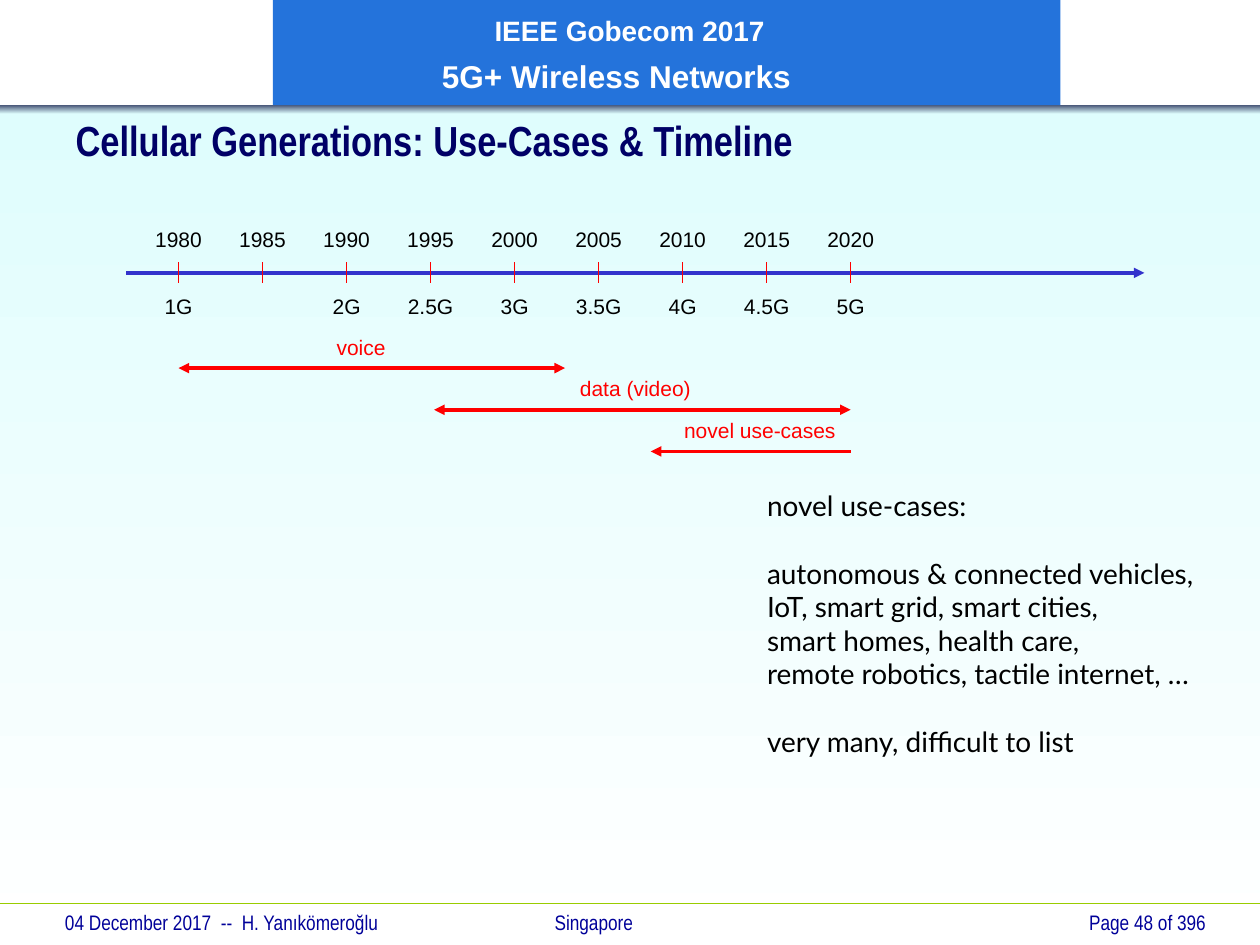
from lxml.etree import SubElement
from pptx import Presentation
from pptx.dml.color import RGBColor
from pptx.enum.shapes import MSO_CONNECTOR as Connector, MSO_SHAPE as Shape
from pptx.enum.text import MSO_ANCHOR as Anchor, MSO_AUTO_SIZE as AutoSize, PP_ALIGN as Align
from pptx.oxml.ns import qn
from pptx.util import Cm, Pt

COLORS = {
    "banner": "2473DB", "white": "FFFFFF", "sky": "DFFDFD", "shade": "475577",
    "rule": "99CC00", "footer": "000099", "title": "000066",
    "axis": "3333CC", "red": "FF0000", "black": "000000",
}
TITLE = "Cellular Generations: Use-Cases & Timeline"
# text, size, indent (cm)
BANNER_LINES = [("IEEE Gobecom 2017", 16, 4.22), ("5G+ Wireless Networks", 18, 3.16)]
# text, left (cm), width (cm), alignment
FOOTERS = [
    ("04 December 2017  --  H. Yanıkömeroğlu", 1.06, 8.5, Align.LEFT),
    ("Singapore", 10.93, 4, Align.LEFT),
    ("Page 48 of 396", 19.05, 5.51, Align.RIGHT),
]
GENERATIONS = {
    1980: "1G", 1985: "", 1990: "2G", 1995: "2.5G", 2000: "3G",
    2005: "3.5G", 2010: "4G", 2015: "4.5G", 2020: "5G",
}
# label, label centre (cm), first year, last year, arrowheads
USE_CASES = [
    ("voice", 7.28, 1980, 2003, ("headEnd", "tailEnd")),
    ("data (video)", 12.81, 1995.2, 2020, ("headEnd", "tailEnd")),
    ("novel use-cases", 15.32, 2008.1, 2020, ("headEnd",)),
]
NOVEL_GROUPS = [
    ["novel use-cases:"],
    ["autonomous & connected vehicles,", "IoT, smart grid, smart cities,",
     "smart homes, health care,", "remote robotics, tactile internet, …"],
    ["very many, difficult to list"],
]
SLIDE_WIDTH, SLIDE_HEIGHT = 25.4, 19.05
HEADER_HEIGHT = 2.12
FOOTER_TOP = 18.21
X_1980, X_2020 = 3.6, 17.15
AXIS_Y, HALF_TICK = 5.5, 0.21
YEAR_TOP, GENERATION_TOP = 4.44, 5.79
SPAN_TOP, SPAN_STEP, LABEL_RISE = 7.42, 0.84, 0.81


def color(name):
    return RGBColor.from_string(COLORS[name])


def box(left, top, width, height):
    return Cm(left), Cm(top), Cm(width), Cm(height)


def year_x(year):
    return X_1980 + (year - 1980) / 40 * (X_2020 - X_1980)


def set_font(paragraph, name, size, color_name, bold=False):
    font = paragraph.font
    font.name, font.size, font.bold = name, Pt(size), bold
    font.color.rgb = color(color_name)


def add_rectangle(slide, *place):
    shape = slide.shapes.add_shape(Shape.RECTANGLE, *box(*place))
    shape.shadow.inherit = False
    shape.line.fill.background()
    return shape


def add_gradient(slide, place, top_color, bottom_color):
    fill = add_rectangle(slide, *place).fill
    fill.gradient()
    fill.gradient_angle = 270
    for stop, name in zip(fill.gradient_stops, (top_color, bottom_color)):
        stop.color.rgb = color(name)


def add_line(slide, start, end, color_name, width, arrowheads=()):
    line = slide.shapes.add_connector(
        Connector.STRAIGHT, *(Cm(value) for value in (*start, *end)))
    line.line.color.rgb = color(color_name)
    line.line.width = Pt(width)
    for arrowhead in arrowheads:
        SubElement(line.line._get_or_add_ln(), qn(f"a:{arrowhead}"), type="triangle")
    SubElement(line._element.spPr, qn("a:effectLst"))


def add_text(slide, text, place, font_name, color_name, align):
    frame = slide.shapes.add_textbox(*box(*place)).text_frame
    frame.word_wrap = True
    paragraph = frame.paragraphs[0]
    paragraph.text, paragraph.alignment = text, align
    set_font(paragraph, font_name, 12, color_name)


def add_label(slide, text, center, top, color_name="black"):
    width = 4 if len(text) > 5 else 1.6
    add_text(slide, text, (center - width / 2, top, width, 0.77),
             "Arial", color_name, Align.CENTER)


def place_placeholder(slide, placeholder, *place):
    """Position a placeholder and bring it in front of the backdrop."""
    placeholder.left, placeholder.top, placeholder.width, placeholder.height = box(*place)
    slide.shapes._spTree.append(placeholder._element)
    frame = placeholder.text_frame
    frame.auto_size, frame.word_wrap = AutoSize.NONE, True
    return frame


def add_backdrop(slide):
    add_gradient(slide, (0, 2.18, SLIDE_WIDTH, SLIDE_HEIGHT - 2.18), "sky", "white")
    add_line(slide, (0, FOOTER_TOP), (SLIDE_WIDTH, FOOTER_TOP), "rule", 0.75)
    for text, left, width, align in FOOTERS:
        add_text(slide, text, (left, FOOTER_TOP, width, 0.75),
                 "Arial Narrow", "footer", align)
    add_gradient(slide, (0, HEADER_HEIGHT, SLIDE_WIDTH, 0.18), "shade", "sky")

    banner = add_rectangle(slide, 5.5, 0, 15.88, HEADER_HEIGHT)
    banner.fill.solid()
    banner.fill.fore_color.rgb = color("banner")
    frame = banner.text_frame
    frame.vertical_anchor = Anchor.MIDDLE
    for index, (text, size, indent) in enumerate(BANNER_LINES):
        paragraph = frame.add_paragraph() if index else frame.paragraphs[0]
        paragraph.text, paragraph.alignment = text, Align.LEFT
        paragraph.line_spacing = 1.1
        paragraph.space_before = Pt(3.6 if index else 0)
        paragraph._p.get_or_add_pPr().set("marL", str(Cm(indent)))
        set_font(paragraph, "Arial", size, "white", True)


def add_title(slide):
    frame = place_placeholder(slide, slide.shapes.title, 1.27, 2.29, 17.58, 1.07)
    frame.vertical_anchor = Anchor.MIDDLE
    paragraph = frame.paragraphs[0]
    paragraph.text, paragraph.alignment = TITLE, Align.LEFT
    set_font(paragraph, "Arial Narrow", 24, "title", True)


def add_timeline(slide):
    add_line(slide, (2.54, AXIS_Y), (23.07, AXIS_Y), "axis", 2, ("tailEnd",))
    for year, generation in GENERATIONS.items():
        x = year_x(year)
        add_line(slide, (x, AXIS_Y - HALF_TICK), (x, AXIS_Y + HALF_TICK), "red", 0.75)
        add_label(slide, str(year), x, YEAR_TOP)
        if generation:
            add_label(slide, generation, x, GENERATION_TOP)
    for row, (label, center, first, last, arrowheads) in enumerate(USE_CASES):
        y = SPAN_TOP + row * SPAN_STEP
        add_line(slide, (year_x(first), y), (year_x(last), y), "red", 2, arrowheads)
        add_label(slide, label, center, y - LABEL_RISE, "red")


def add_novel_use_cases(slide):
    frame = place_placeholder(slide, slide.placeholders[1], 15.21, 9.73, 9.35, 5.74)
    for group_index, group in enumerate(NOVEL_GROUPS):
        for line_index, text in enumerate(group):
            is_first = group_index == line_index == 0
            paragraph = frame.paragraphs[0] if is_first else frame.add_paragraph()
            paragraph.text = text
            starts_group = group_index and not line_index
            paragraph.space_before = Pt(19.2 if starts_group else 0)
            properties = paragraph._p.get_or_add_pPr()
            properties.set("marL", "0")
            properties.set("indent", "0")
            SubElement(properties, qn("a:buNone"))
            set_font(paragraph, "Lato", 16, "black")


def main():
    presentation = Presentation()
    presentation.slide_width, presentation.slide_height = Cm(SLIDE_WIDTH), Cm(SLIDE_HEIGHT)
    slide = presentation.slides.add_slide(presentation.slide_layouts[1])
    add_backdrop(slide)
    add_title(slide)
    add_timeline(slide)
    add_novel_use_cases(slide)
    presentation.save("out.pptx")


if __name__ == "__main__":
    main()
